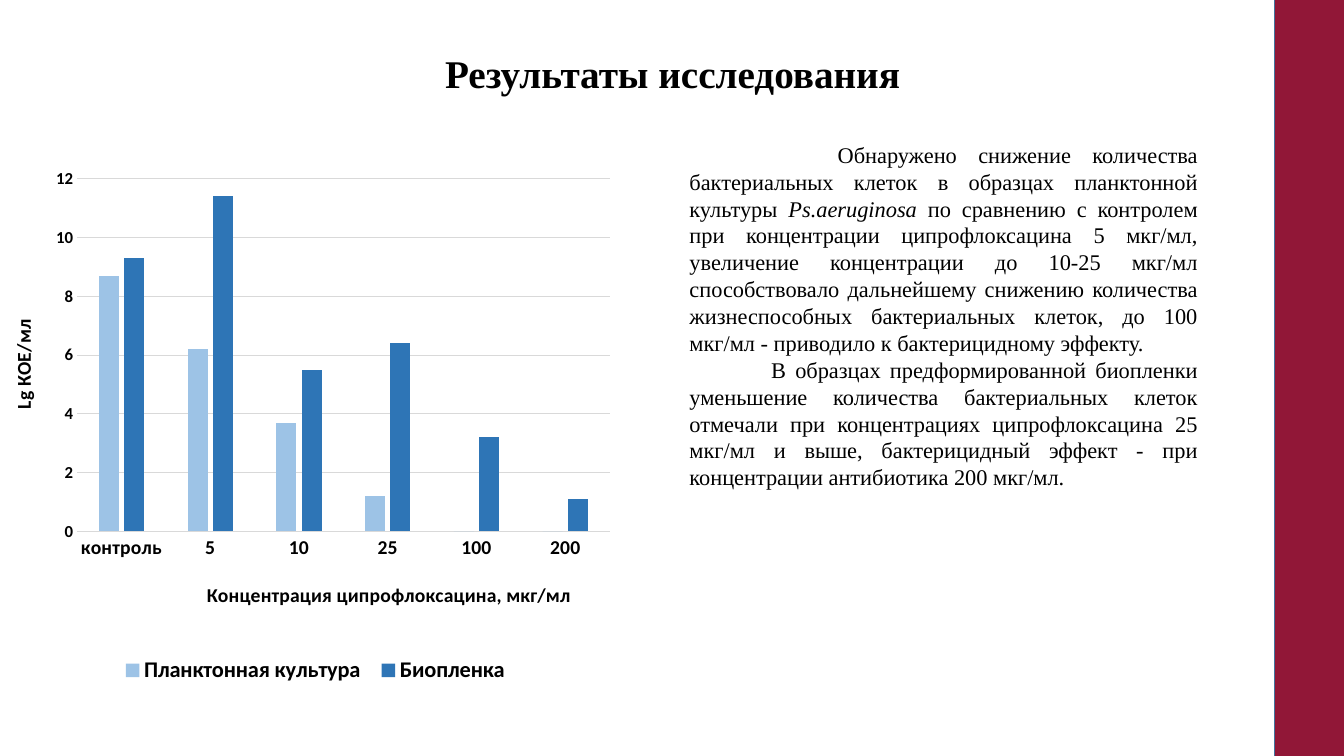
"""Builds a slide of research results with a column chart and findings."""
from pptx import Presentation
from pptx.chart.data import CategoryChartData
from pptx.dml.color import RGBColor
from pptx.enum.chart import XL_CHART_TYPE, XL_LEGEND_POSITION, XL_TICK_MARK
from pptx.enum.shapes import MSO_SHAPE
from pptx.enum.text import MSO_ANCHOR, MSO_AUTO_SIZE, PP_ALIGN
from pptx.oxml import parse_xml
from pptx.oxml.ns import nsdecls, qn
from pptx.util import Inches, Pt

COLORS = {"ink": "000000", "grid": "D9D9D9", "band": "911737",
          "edge": "43739E", "light": "9DC3E6", "dark": "2E75B6"}
DOSES = ["контроль", "5", "10", "25", "100", "200"]
SERIES = [("Планктонная культура", [8.7, 6.2, 3.7, 1.2, 0, 0], "light"),
          ("Биопленка", [9.3, 11.4, 5.5, 6.4, 3.2, 1.1], "dark")]
NOTES = [
    (1.47, [
        ("Обнаружено снижение количества бактериальных клеток в образцах "
         "планктонной культуры ", False),
        ("Ps.aeruginosa", True),
        (" по сравнению с контролем при концентрации ципрофлоксацина 5 мкг/мл, "
         "увеличение концентрации до 10-25 мкг/мл способствовало дальнейшему "
         "снижению количества жизнеспособных бактериальных клеток, до 100 мкг/мл "
         "- приводило к бактерицидному эффекту.", False)]),
    (0.81, [
        ("В образцах предформированной биопленки уменьшение количества "
         "бактериальных клеток отмечали при концентрациях ципрофлоксацина "
         "25 мкг/мл и выше, бактерицидный эффект - при концентрации антибиотика "
         "200 мкг/мл.", False)])]


class Board:
    def __init__(self, slide):
        self.slide = slide
        self.serif = "Times New Roman"
        self.sans = "Calibri"

    def tint(self, name):
        return RGBColor.from_string(COLORS[name])

    def style(self, font, face, size, bold=False):
        font.name = face
        font.size = Pt(size)
        font.bold = bold
        font.color.rgb = self.tint("ink")

    def text(self, box, paras, size, align, bold=False, line=None):
        frame = self.slide.shapes.add_textbox(*map(Inches, box)).text_frame
        frame.word_wrap = True
        for i, (indent, runs) in enumerate(paras):
            para = frame.paragraphs[0] if i == 0 else frame.add_paragraph()
            para.alignment = align
            if line:
                para.line_spacing = line
            if indent:
                para._p.get_or_add_pPr().set("indent", str(Inches(indent)))
            for words, slant in runs:
                run = para.add_run()
                run.text = words
                self.style(run.font, self.serif, size, bold)
                run.font.italic = slant
        return frame

    def band(self, box, fill, edge):
        shape = self.slide.shapes.add_shape(MSO_SHAPE.RECTANGLE, *map(Inches, box))
        shape.shadow.inherit = False
        shape.fill.solid()
        shape.fill.fore_color.rgb = self.tint(fill)
        shape.line.color.rgb = self.tint(edge)
        shape.line.width = Pt(1)

    def place(self, node, index, inner=False, **spots):
        old = node.find(qn("c:layout"))
        if old is not None:
            node.remove(old)
        target = '<c:layoutTarget val="inner"/>' if inner else ""
        modes = "".join(f'<c:{k}Mode val="edge"/>' for k in spots if k in "xy")
        sizes = "".join(f'<c:{k} val="{v}"/>' for k, v in spots.items())
        node.insert(index, parse_xml(
            f'<c:layout {nsdecls("c")}><c:manualLayout>{target}{modes}{sizes}'
            "</c:manualLayout></c:layout>"))

    def axis(self, axis, title, size):
        axis.major_tick_mark = axis.minor_tick_mark = XL_TICK_MARK.NONE
        self.style(axis.tick_labels.font, self.sans, size, True)
        run = axis.axis_title.text_frame.paragraphs[0].add_run()
        run.text = title
        self.style(run.font, self.sans, 14, True)

    def rule(self, line):
        line.color.rgb = self.tint("grid")
        line.width = Pt(0.75)

    def chart(self, box):
        data = CategoryChartData()
        data.categories = DOSES
        for name, values, _ in SERIES:
            data.add_series(name, values)
        chart = self.slide.shapes.add_chart(
            XL_CHART_TYPE.COLUMN_CLUSTERED, *map(Inches, box), data).chart
        chart.has_title = False
        self.style(chart.font, self.sans, 10)
        plot = chart.plots[0]
        plot.vary_by_categories = False
        plot.gap_width = 219
        plot.overlap = -27
        for bar, (_, _, color) in zip(plot.series, SERIES):
            bar.format.fill.solid()
            bar.format.fill.fore_color.rgb = self.tint(color)
        cats, vals = chart.category_axis, chart.value_axis
        self.axis(cats, "Концентрация ципрофлоксацина, мкг/мл", 14)
        self.axis(vals, "Lg КОЕ/мл", 12)
        self.rule(cats.format.line)
        self.rule(vals.major_gridlines.format.line)
        vals.format.line.fill.background()
        vals.minimum_scale, vals.maximum_scale, vals.major_unit = 0, 12, 2
        chart.has_legend = True
        legend = chart.legend
        legend.position = XL_LEGEND_POSITION.BOTTOM
        legend.include_in_layout = False
        self.style(legend.font, self.sans, 16, True)
        area = chart._chartSpace.chart.plotArea
        self.place(area, 0, True, x=0.11, y=0.03, w=0.76, h=0.61)
        self.place(cats.axis_title._element, 1, x=0.29, y=0.72)
        self.place(legend._element, 1, x=0.16, y=0.84, w=0.58, h=0.08)


def main():
    deck = Presentation()
    deck.slide_width, deck.slide_height = Inches(13.33), Inches(7.5)
    board = Board(deck.slides.add_slide(deck.slide_layouts[6]))
    title = board.text((0.92, 0.4, 11.5, 0.71),
                       [(0, [("Результаты исследования", False)])],
                       28, PP_ALIGN.CENTER, True, 0.9)
    title.vertical_anchor = MSO_ANCHOR.MIDDLE
    board.chart((0, 1.6, 6.95, 5.74))
    board.band((12.64, -0.08, 0.82, 7.65), "band", "edge")
    notes = board.text((6.74, 1.35, 5.24, 3.6), NOTES, 16, PP_ALIGN.JUSTIFY)
    notes.auto_size = MSO_AUTO_SIZE.SHAPE_TO_FIT_TEXT
    deck.save("out.pptx")


if __name__ == "__main__":
    main()
